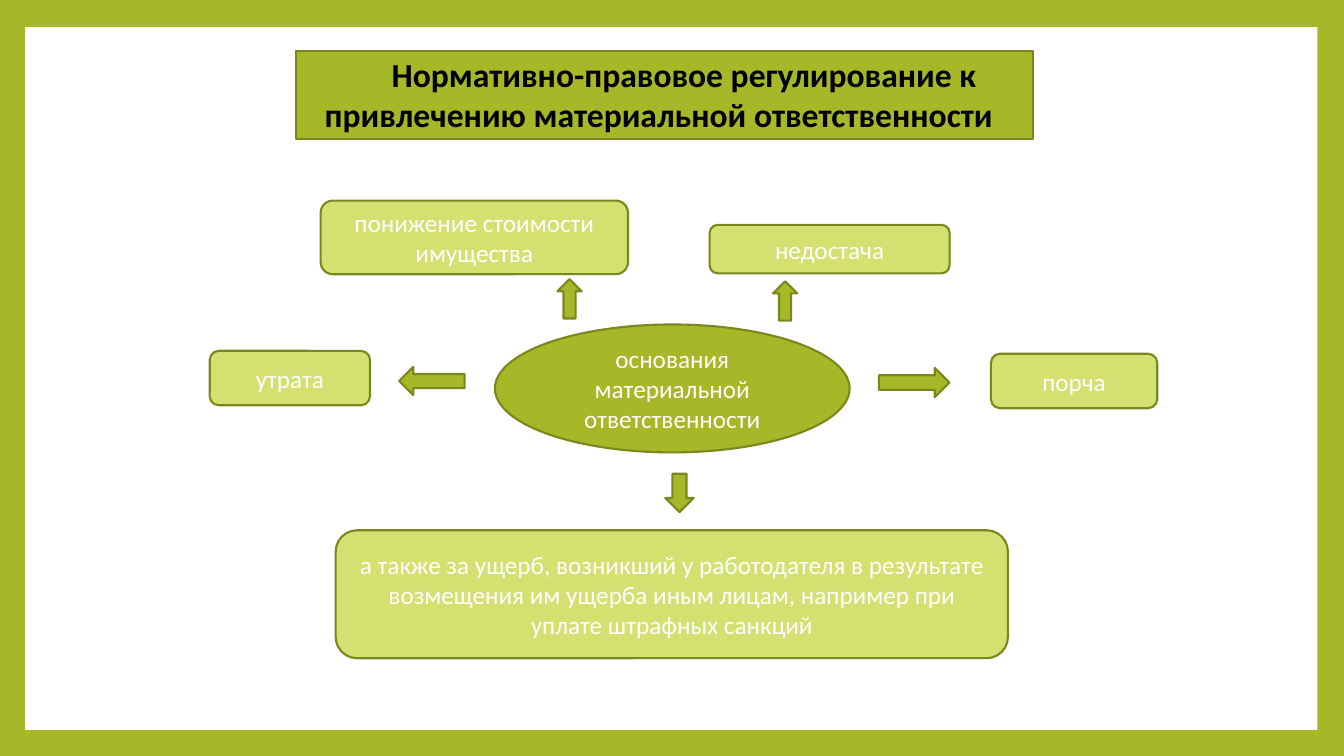
import pptx
import pptx.util
import pptx.dml.color
import pptx.enum.shapes
import pptx.enum.text

Pt = pptx.util.Pt
SHAPES = pptx.enum.shapes.MSO_SHAPE
ANCHORS = pptx.enum.text.MSO_ANCHOR
COLORS = {
    "olive": "A6B727",
    "lime": "D3E171",
    "outline": "7B871D",
    "white": "FFFFFF",
    "black": "000000",
}
FONT = "Calibri"


def color(name):
    """Return the named palette colour."""
    return pptx.dml.color.RGBColor.from_string(COLORS[name])


def add_block(slide, kind, box, fill, outlined=True):
    """Add a filled shape in the box, with or without the dark outline."""
    shape = slide.shapes.add_shape(kind, *(Pt(value) for value in box))
    shape.shadow.inherit = False
    shape.fill.solid()
    shape.fill.fore_color.rgb = color(fill)
    if outlined:
        shape.line.color.rgb = color("outline")
        shape.line.width = Pt(1.5)
    else:
        shape.line.fill.background()
    return shape


def write_text(shape, text, size, text_color, anchor, bold=False):
    """Write one centred paragraph into the shape and return it."""
    frame = shape.text_frame
    frame.word_wrap = True
    frame.vertical_anchor = anchor
    paragraph = frame.paragraphs[0]
    paragraph.alignment = pptx.enum.text.PP_ALIGN.CENTER
    run = paragraph.add_run()
    run.text = text
    run.font.name = FONT
    run.font.size = Pt(size)
    run.font.bold = bold
    run.font.color.rgb = color(text_color)
    return paragraph


def draw_background(slide, box):
    """Paint the olive border and the white sheet inside it."""
    slide.background.fill.solid()
    slide.background.fill.fore_color.rgb = color("olive")
    add_block(slide, SHAPES.RECTANGLE, box, "white", outlined=False)


def draw_title(slide, box):
    """Draw the title plate and its text with an indented first line."""
    left, top, width, height = box
    add_block(slide, SHAPES.RECTANGLE, box, "olive")
    text_box = slide.shapes.add_textbox(
        Pt(left - 5), Pt(top - 2.1), Pt(width + 1.5), Pt(height + 2.9))
    paragraph = write_text(
        text_box,
        "Нормативно-правовое регулирование к привлечению материальной ответственности",
        24, "black", ANCHORS.TOP, bold=True)
    properties = paragraph._p.get_or_add_pPr()
    properties.set("marL", "0")
    properties.set("indent", str(Pt(36)))


def draw_grounds(slide, box):
    """Draw the central ellipse, the arrows and the grounds around it."""
    left, top, width, height = box
    arrows = [
        (SHAPES.RIGHT_ARROW, 478, 119.5, 50.4, 20.9),
        (SHAPES.DOWN_ARROW, 325.4, 195.1, 20.2, 27.4),
        (SHAPES.LEFT_ARROW, 135.3, 118.8, 46.8, 20.2),
        (SHAPES.UP_ARROW, 402.4, 57.6, 17.3, 28.1),
        (SHAPES.UP_ARROW, 248.4, 56.1, 17.3, 28.1),
    ]
    grounds = [
        ("утрата", 0, 107.3, 114.5, 38.9),
        ("порча", width - 118.8, 109.4, 118.8, 38.9),
        ("понижение стоимости имущества", 79.2, 0, 219.6, 52.6),
        ("недостача", 357.1, 17.3, 171.4, 34.6),
        ("а также за ущерб, возникший у работодателя в результате возмещения "
         "им ущерба иным лицам, например при уплате штрафных санкций",
         90, height - 91.4, 480.2, 91.4),
    ]
    center = add_block(
        slide, SHAPES.OVAL, (left + 203.7, top + 88.5, 253.4, 91.4), "olive")
    write_text(center, "основания материальной ответственности",
               18, "white", ANCHORS.MIDDLE)
    for kind, x, y, arrow_width, arrow_height in arrows:
        add_block(slide, kind,
                  (left + x, top + y, arrow_width, arrow_height), "olive")
    for text, x, y, ground_width, ground_height in grounds:
        ground = add_block(slide, SHAPES.ROUNDED_RECTANGLE,
                           (left + x, top + y, ground_width, ground_height), "lime")
        write_text(ground, text, 18, "white", ANCHORS.MIDDLE)


def main():
    """Build the slide and save the presentation."""
    presentation = pptx.Presentation()
    presentation.slide_width = Pt(960)
    presentation.slide_height = Pt(540)
    slide = presentation.slides.add_slide(presentation.slide_layouts[6])
    draw_background(slide, (18, 19.4, 923, 502))
    draw_title(slide, (211.7, 36.7, 526.3, 62.6))
    draw_grounds(slide, (149.8, 143.3, 676.8, 326.9))
    presentation.save("out.pptx")


if __name__ == "__main__":
    main()
